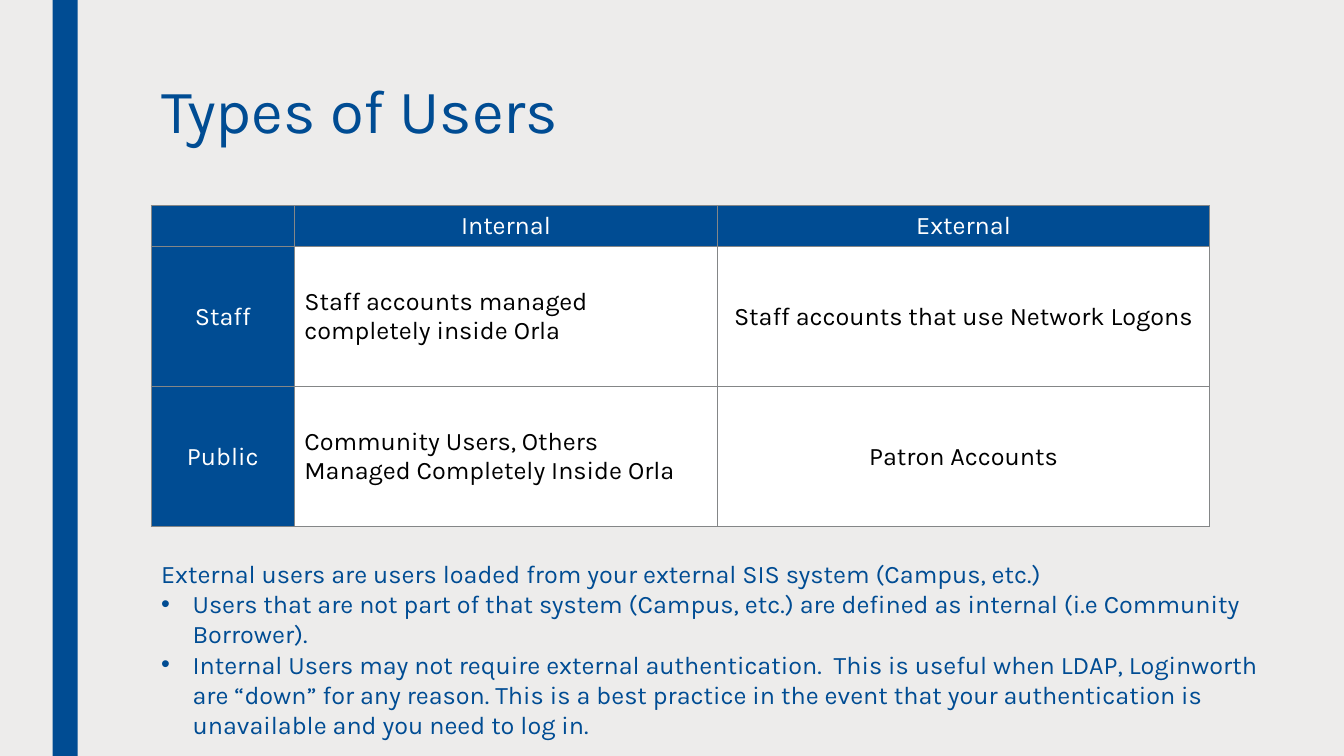
from dataclasses import dataclass

from lxml import etree
from pptx import Presentation
from pptx.dml.color import RGBColor
from pptx.enum.shapes import MSO_SHAPE
from pptx.enum.text import MSO_ANCHOR, PP_ALIGN
from pptx.oxml.ns import qn
from pptx.util import Pt

RECT = MSO_SHAPE.RECTANGLE
TOP, MIDDLE = MSO_ANCHOR.TOP, MSO_ANCHOR.MIDDLE
LEFT, CENTER = PP_ALIGN.LEFT, PP_ALIGN.CENTER

BLUE = RGBColor(0x00, 0x4C, 0x93)
PAPER = RGBColor(0xED, 0xEC, 0xEB)
GREY = RGBColor(0x84, 0x86, 0x87)
WHITE = RGBColor(0xFF, 0xFF, 0xFF)
BLACK = RGBColor(0x00, 0x00, 0x00)

FONT = "Karla"
BODY_SIZE = 18
MARGIN = 108
BULLET_INDENT = 22.5


@dataclass
class Note:
    text: str
    bullet: bool = False


COL_WIDTHS = [102.24, 302.4, 351.36]
ROW_HEIGHTS = [29.25, 100, 100]
USER_TYPES = [
    ["", "Internal", "External"],
    ["Staff", "Staff accounts managed completely inside Orla",
     "Staff accounts that use Network Logons"],
    ["Public", "Community Users, Others Managed Completely Inside Orla",
     "Patron Accounts"],
]
NOTES = [
    Note("External users are users loaded from your external SIS system (Campus, etc.)"),
    Note("Users that are not part of that system (Campus, etc.) are defined as "
         "internal (i.e Community Borrower).", bullet=True),
    Note("Internal Users may not require external authentication.  This is useful "
         "when LDAP, Loginworth are “down” for any reason. This is a best practice "
         "in the event that your authentication is unavailable and you need to log in.",
         bullet=True),
]


def set_text(p, text: str, size: float, color: RGBColor, align=LEFT) -> None:
    p.text = text
    p.alignment = align
    p.font.name = FONT
    p.font.size = Pt(size)
    p.font.color.rgb = color


def add_text_frame(s, left: float, top: float, width: float, height: float):
    tf = s.shapes.add_textbox(Pt(left), Pt(top), Pt(width), Pt(height)).text_frame
    tf.word_wrap = True
    return tf


def set_bullet(p) -> None:
    pPr = p._p.get_or_add_pPr()
    pPr.set("marL", str(Pt(BULLET_INDENT)))
    pPr.set("indent", str(-Pt(BULLET_INDENT)))
    font = etree.Element(qn("a:buFont"), typeface="Arial")
    char = etree.Element(qn("a:buChar"), char="•")
    # Bullet elements come before the default run properties
    pPr.insert(0, font)
    pPr.insert(1, char)


def set_borders(cell, color: RGBColor, width: float) -> None:
    tcPr = cell._tc.get_or_add_tcPr()
    for i, side in enumerate(("a:lnL", "a:lnR", "a:lnT", "a:lnB")):
        ln = etree.Element(qn(side), w=str(Pt(width)))
        fill = etree.SubElement(ln, qn("a:solidFill"))
        etree.SubElement(fill, qn("a:srgbClr"), val=str(color))
        tcPr.insert(i, ln)


def add_user_table(s) -> None:
    table = s.shapes.add_table(
        len(ROW_HEIGHTS), len(COL_WIDTHS), Pt(MARGIN), Pt(147),
        Pt(sum(COL_WIDTHS)), Pt(sum(ROW_HEIGHTS))).table
    for column, width in zip(table.columns, COL_WIDTHS):
        column.width = Pt(width)
    for row, height in zip(table.rows, ROW_HEIGHTS):
        row.height = Pt(height)
    for r, texts in enumerate(USER_TYPES):
        for c, text in enumerate(texts):
            cell = table.cell(r, c)
            heading = r == 0 or c == 0
            cell.fill.solid()
            cell.fill.fore_color.rgb = BLUE if heading else WHITE
            cell.vertical_anchor = TOP if r == 0 else MIDDLE
            set_text(cell.text_frame.paragraphs[0], text, BODY_SIZE,
                     WHITE if heading else BLACK,
                     LEFT if r > 0 and c == 1 else CENTER)
            set_borders(cell, GREY, 1)


def main() -> None:
    prs = Presentation()
    prs.slide_width, prs.slide_height = Pt(960), Pt(540)
    s = prs.slides.add_slide(prs.slide_layouts[6])
    s.background.fill.solid()
    s.background.fill.fore_color.rgb = PAPER

    # Side bar
    bar = s.shapes.add_shape(RECT, Pt(37.5), Pt(0), Pt(18), Pt(540))
    bar.shadow.inherit = False
    bar.fill.solid()
    bar.fill.fore_color.rgb = BLUE
    bar.line.fill.background()

    # Title
    p = add_text_frame(s, MARGIN, 54, 756, 116.5).paragraphs[0]
    set_text(p, "Types of Users", 44, BLUE)
    p.line_spacing = 0.89

    # Table of user types
    add_user_table(s)

    # Notes
    tf = add_text_frame(s, MARGIN, 395.25, 817, 116.5)
    for i, note in enumerate(NOTES):
        p = tf.add_paragraph() if i else tf.paragraphs[0]
        set_text(p, note.text, BODY_SIZE, BLUE)
        if note.bullet:
            set_bullet(p)

    prs.save("out.pptx")


if __name__ == "__main__":
    main()
